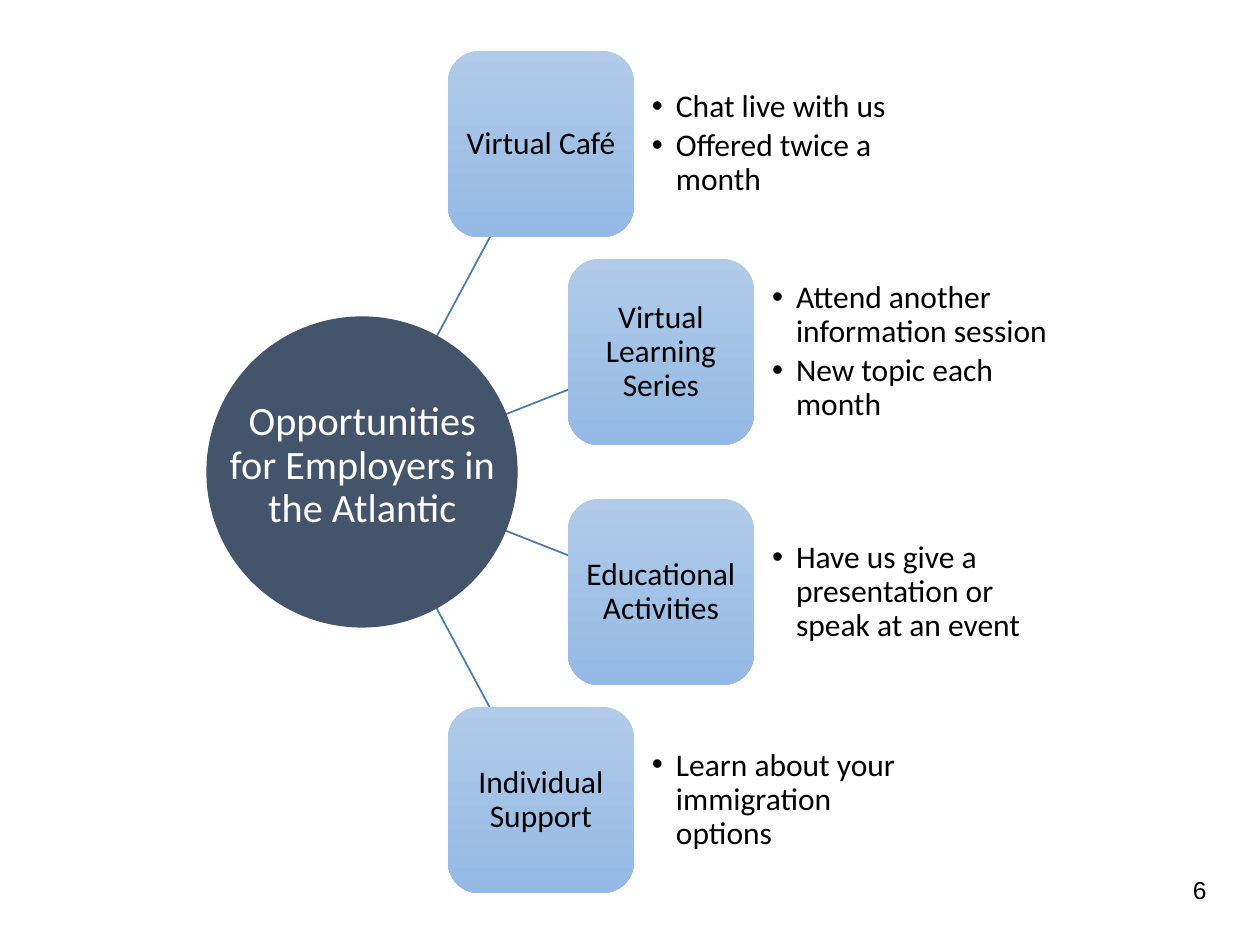
from dataclasses import dataclass

from lxml.etree import SubElement
from pptx import Presentation
from pptx.dml.color import RGBColor
from pptx.enum.shapes import MSO_CONNECTOR, MSO_SHAPE
from pptx.enum.text import MSO_ANCHOR, MSO_AUTO_SIZE, PP_ALIGN
from pptx.oxml.ns import qn
from pptx.util import Emu, Pt


@dataclass(frozen=True)
class Theme:
    dark: RGBColor = RGBColor(0x44, 0x54, 0x6A)
    line: RGBColor = RGBColor(0x49, 0x7C, 0xAB)
    box_top: RGBColor = RGBColor(0xB1, 0xCB, 0xE9)
    box_bottom: RGBColor = RGBColor(0x93, 0xB9, 0xE4)
    black: RGBColor = RGBColor(0, 0, 0)
    white: RGBColor = RGBColor(0xFF, 0xFF, 0xFF)
    font: str = "Calibri"
    number_font: str = "Arial"
    title_size: int = 23
    text_size: int = 18
    number_size: int = 14


@dataclass(frozen=True)
class Branch:
    label: str
    bullets: tuple[str, ...]
    x: int
    y: int
    start: tuple[int, int]
    end: tuple[int, int]


THEME = Theme()
BOX = 186
LIST_OFFSET = 204
LIST_WIDTH = 280
INDENT = 24
BRANCHES = (
    Branch("Virtual Café", ("Chat live with us", "Offered twice a month"),
           448, 51, (422, 364), (496, 226)),
    Branch("Virtual Learning Series",
           ("Attend another information session", "New topic each month"),
           568, 259, (471, 428), (575, 387)),
    Branch("Educational Activities",
           ("Have us give a presentation or speak at an event",),
           568, 499, (471, 517), (575, 558)),
    Branch("Individual Support", ("Learn about your immigration options",),
           448, 707, (422, 581), (496, 719)),
)


def px(n: int) -> Emu:
    return Emu(round(n * 914400 / 126))


def place(sp, x: int, y: int, w: int, h: int) -> None:
    sp.left, sp.top, sp.width, sp.height = px(x), px(y), px(w), px(h)


def setup_frame(tf, margin: int) -> None:
    tf.word_wrap = True
    tf.auto_size = MSO_AUTO_SIZE.NONE
    tf.vertical_anchor = MSO_ANCHOR.MIDDLE
    tf.margin_left = tf.margin_right = px(margin)
    tf.margin_top = tf.margin_bottom = px(margin)


def style(p, size: int, color: RGBColor, align: PP_ALIGN,
          font: str = THEME.font, spacing: float = 0.9) -> None:
    p.alignment = align
    p.line_spacing = spacing
    p.space_before = Pt(0)
    for r in p.runs:
        r.font.name = font
        r.font.size = Pt(size)
        r.font.bold = False
        r.font.color.rgb = color


def add_bullet(p) -> None:
    pPr = p._p.get_or_add_pPr()
    pPr.set("marL", str(px(INDENT)))
    pPr.set("indent", str(-px(INDENT)))
    SubElement(pPr, qn("a:buFont")).set("typeface", THEME.number_font)
    SubElement(pPr, qn("a:buChar")).set("char", "•")


def draw_line(s, b: Branch) -> None:
    line = s.shapes.add_connector(
        MSO_CONNECTOR.STRAIGHT, *(px(n) for n in b.start + b.end))
    line.line.color.rgb = THEME.line
    line.line.width = Pt(1)
    SubElement(line._element.spPr, qn("a:effectLst"))


def draw_box(s, b: Branch) -> None:
    sp = s.shapes.add_shape(MSO_SHAPE.ROUNDED_RECTANGLE,
                            px(b.x), px(b.y), px(BOX), px(BOX))
    sp.shadow.inherit = False
    sp.line.fill.background()
    sp.fill.gradient()
    sp.fill.gradient_angle = 270
    for stop, color in zip(sp.fill.gradient_stops,
                           (THEME.box_top, THEME.box_bottom)):
        stop.color.rgb = color
    tf = sp.text_frame
    tf.text = b.label
    setup_frame(tf, 1)
    style(tf.paragraphs[0], THEME.text_size, THEME.black, PP_ALIGN.CENTER)


def fill_list(sp, b: Branch) -> None:
    place(sp, b.x + LIST_OFFSET, b.y, LIST_WIDTH, BOX)
    tf = sp.text_frame
    tf.text = "\n".join(b.bullets)
    setup_frame(tf, 0)
    for p in tf.paragraphs:
        add_bullet(p)
        style(p, THEME.text_size, THEME.black, PP_ALIGN.LEFT)
        p.space_after = Pt(2.7)


def draw_hub(s) -> None:
    hub = s.shapes.add_shape(MSO_SHAPE.OVAL, px(207), px(317), px(310), px(310))
    hub.shadow.inherit = False
    hub.fill.solid()
    hub.fill.fore_color.rgb = THEME.dark
    hub.line.color.rgb = THEME.dark
    hub.line.width = Pt(0.75)
    title = s.shapes.title
    hub._element.addnext(title._element)
    place(title, 219, 378, 287, 176)
    tf = title.text_frame
    tf.text = "Opportunities for Employers in the Atlantic"
    setup_frame(tf, 10)
    style(tf.paragraphs[0], THEME.title_size, THEME.white, PP_ALIGN.CENTER)


def draw_number(s) -> None:
    sp = s.shapes.add_textbox(px(1045), px(869), px(174), px(43))
    tf = sp.text_frame
    tf.text = "6"
    tf.word_wrap = True
    style(tf.paragraphs[0], THEME.number_size, THEME.black, PP_ALIGN.RIGHT,
          THEME.number_font, 1.0)


def main() -> None:
    prs = Presentation()
    prs.slide_width, prs.slide_height = px(1260), px(945)
    s = prs.slides.add_slide(prs.slide_layouts.get_by_name("Comparison"))
    bodies = [sp for sp in s.placeholders if sp.placeholder_format.idx > 0]
    for b in BRANCHES:
        draw_line(s, b)
    draw_hub(s)
    for b, body in zip(BRANCHES, bodies):
        draw_box(s, b)
        fill_list(body, b)
    draw_number(s)
    prs.save("out.pptx")


if __name__ == "__main__":
    main()
